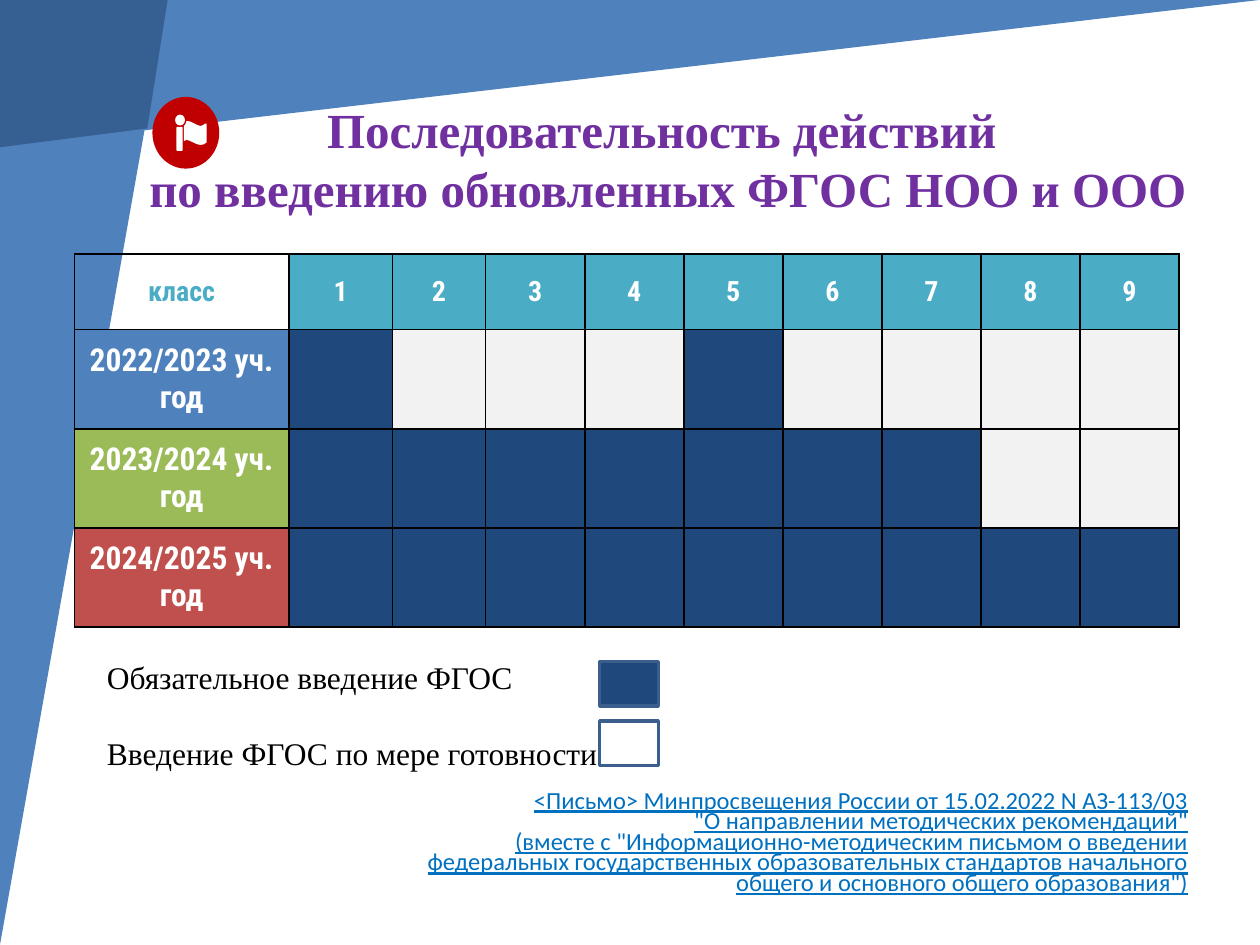
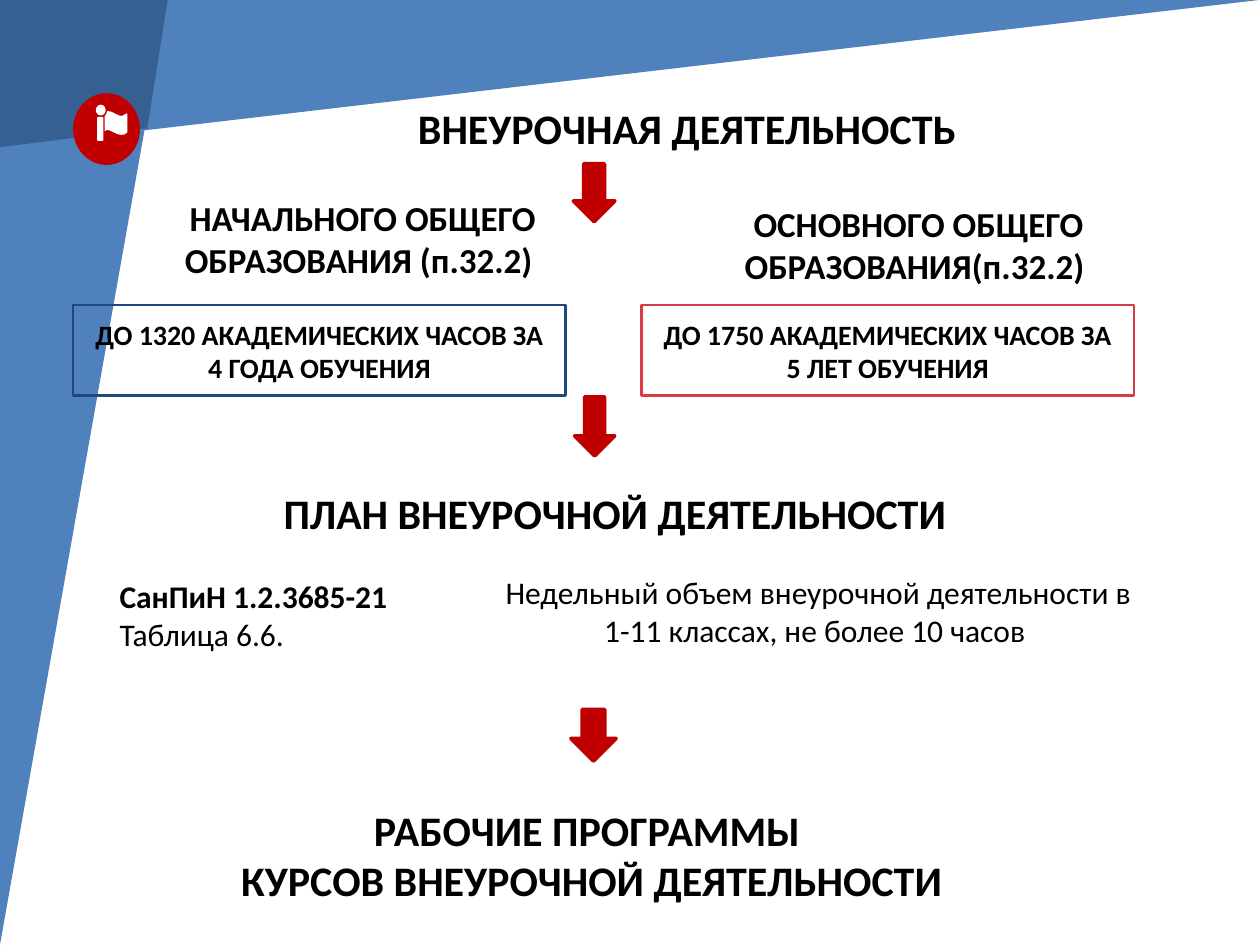
from lxml import etree
from pptx import Presentation, util as u
from pptx.dml.color import RGBColor
from pptx.enum import shapes, text
from pptx.oxml.ns import qn

BAND, CORNER, NAVY, RED = "4F81BD", "376092", "1F497D", "C00000"
TEAL, PALE, WHITE, BLACK = "4BACC6", "F2F2F2", "FFFFFF", "000000"
SWATCH_EDGE = "3A5F8C"
SHAPE, ALIGN, ANCHOR = shapes.MSO_SHAPE, text.PP_ALIGN, text.MSO_ANCHOR

SERIF = dict(name="Times New Roman", size=18, color=BLACK)
BODY = dict(name="Calibri", size=18, color=BLACK)
HEADING = dict(BODY, size=24, bold=True)
LEVEL = dict(BODY, size=20, bold=True)
HOURS = dict(BODY, size=16, bold=True)
TITLE = dict(SERIF, size=28, color="7030A0", bold=True)
LETTER = dict(BODY, size=14, color="0070C0", underline=True)
CELL = dict(name="Roboto Condensed", size=16, color=WHITE, bold=True)

COLUMN_WIDTHS = [122.4, 59.2, 53.4] + [56.6] * 7
ROW_HEIGHTS = [43.2] + [56.6] * 3
SCHOOL_YEARS = [  # label, label fill, grades where the standard is mandatory
    ("2022/2023 уч. год", BAND, {1, 5}),
    ("2023/2024 уч. год", "9BBB59", set(range(1, 8))),
    ("2024/2025 уч. год", "C0504D", set(range(1, 10))),
]
FLAG = [(6.5, 3.6), (6, 5.2), (5, 6.5), (5, 15.1), (6.5, 14.4), (8.2, 14.9), (10.1, 15.8),
        (12.4, 16.9), (14.4, 17.3), (16.4, 17), (18, 15.8), (18, 5.4), (17.3, 5),
        (15.9, 6), (14.4, 6.5), (12.8, 6), (10.8, 5), (8.8, 4)]


def rgb(value):
    return RGBColor.from_string(value)


def points(*lengths):
    return [u.Pt(length) for length in lengths]


def paint(shape, fill=None, line=None, width=1):
    shape.shadow.inherit = False
    if fill:
        shape.fill.solid()
        shape.fill.fore_color.rgb = rgb(fill)
    else:
        shape.fill.background()
    if line:
        shape.line.color.rgb = rgb(line)
        shape.line.width = u.Pt(width)
    else:
        shape.line.fill.background()
    return shape


def add_preset(parent, kind, at, *style):
    return paint(parent.shapes.add_shape(kind, *points(*at)), *style)


def add_polygon(parent, corners, fill):
    corners = [points(*corner) for corner in corners]
    builder = parent.shapes.build_freeform(*corners[0], scale=1.0)
    builder.add_line_segments(corners[1:], close=True)
    return paint(builder.convert_to_shape(), fill)


def format_font(font, style):
    values = dict(style)
    font.color.rgb = rgb(values.pop("color"))
    values["size"] = u.Pt(values["size"])
    for name, value in values.items():
        setattr(font, name, value)


def write(frame, lines, style, align=ALIGN.CENTER, inset=7.2, anchor=ANCHOR.TOP, **spacing):
    """Fill a text frame with one paragraph per line."""
    frame.word_wrap = True
    frame.auto_size = text.MSO_AUTO_SIZE.NONE
    frame.vertical_anchor = anchor
    frame.margin_top = frame.margin_bottom = u.Pt(inset)
    frame.margin_left = frame.margin_right = u.Pt(7.2)
    for index, line in enumerate(lines):
        para = frame.paragraphs[0] if index == 0 else frame.add_paragraph()
        para.text = line
        para.alignment = align
        for name, value in spacing.items():
            if index or name != "space_before":
                setattr(para, name, value)
        for span in para.runs:
            format_font(span.font, style)


def add_text(slide, at, lines, style, **layout):
    box = slide.shapes.add_textbox(*points(*at))
    write(box.text_frame, lines, style, **layout)
    return box


def set_title(slide, at, lines, style):
    title = slide.shapes.title
    title.left, title.top, title.width, title.height = points(*at)
    write(title.text_frame, lines, style)


def add_badge(slide, left, top, glyph_top):
    """Red disc with a white figure holding a flag."""
    add_preset(slide, SHAPE.OVAL, (left, top, 38.2, 41), RED)
    x, y = left + 13, glyph_top
    group = slide.shapes.add_group_shape()
    add_preset(group, SHAPE.OVAL, (x, y, 5.6, 6.2), WHITE)
    add_preset(group, SHAPE.ROUNDED_RECTANGLE, (x + 0.7, y + 7, 3.6, 13.7), WHITE)
    add_polygon(group, [(x + dx, y + dy) for dx, dy in FLAG], WHITE)


def add_backdrop(slide):
    """Draw the blue bands and hand them to the slide's layout."""
    bands = [add_preset(slide, SHAPE.RIGHT_TRIANGLE, (0, 0, width, height), BAND)
             for width, height in ((720, 84.2), (95.8, 540))]
    for band in bands:
        band.element.spPr.find(qn("a:xfrm")).set("flipV", "1")
    corner = add_polygon(slide, [(0, 0), (95.8, 0), (84.2, 73.4), (0, 84.2)], CORNER)
    for number, shape in enumerate(bands + [corner], start=20):
        shape.element.nvSpPr.cNvPr.set("id", str(number))
        slide.slide_layout.shapes.element.append(shape.element)


def format_cell(cell, fill):
    properties = cell._tc.get_or_add_tcPr()
    for side in ("a:lnL", "a:lnR", "a:lnT", "a:lnB"):
        border = etree.SubElement(properties, qn(side), w=str(u.Pt(1)))
        solid = etree.SubElement(border, qn("a:solidFill"))
        etree.SubElement(solid, qn("a:srgbClr"), val=BLACK)
    if fill:
        cell.fill.solid()
        cell.fill.fore_color.rgb = rgb(fill)
    else:
        cell.fill.background()


def write_cell(cell, label, fill, **changes):
    cell.text = label
    cell.vertical_anchor = ANCHOR.MIDDLE
    for side in ("left", "right", "top", "bottom"):
        setattr(cell, f"margin_{side}", u.Pt(7.2))
    para = cell.text_frame.paragraphs[0]
    para.alignment = ALIGN.CENTER
    format_font(para.runs[0].font, dict(CELL, **changes))
    format_cell(cell, fill)


def add_schedule(slide):
    at = points(42.6, 145.2, sum(COLUMN_WIDTHS), sum(ROW_HEIGHTS))
    table = slide.shapes.add_table(len(ROW_HEIGHTS), len(COLUMN_WIDTHS), *at).table
    table.first_row = table.horz_banding = False
    for column, width in zip(table.columns, COLUMN_WIDTHS):
        column.width = u.Pt(width)
    for row, height in zip(table.rows, ROW_HEIGHTS):
        row.height = u.Pt(height)
    grades = range(1, len(COLUMN_WIDTHS))
    write_cell(table.cell(0, 0), "класс", None, color=TEAL)
    for grade in grades:
        write_cell(table.cell(0, grade), str(grade), TEAL)
    for row, (label, fill, mandatory) in enumerate(SCHOOL_YEARS, start=1):
        write_cell(table.cell(row, 0), label, fill, size=18)
        for grade in grades:
            format_cell(table.cell(row, grade), NAVY if grade in mandatory else PALE)


def build_schedule_slide(slide):
    set_title(slide, (57.6, 49.7, 648, 72),
              ["Последовательность действий ", "по введению обновленных ФГОС НОО и ООО"], TITLE)
    add_badge(slide, 87.1, 55.4, 65.5)
    add_schedule(slide)
    add_text(slide, (54, 372.2, 369.4, 72.7),
             ["Обязательное введение ФГОС", "Введение ФГОС по мере готовности"], SERIF,
             align=ALIGN.LEFT, inset=3.6, space_before=u.Pt(22))
    for top, fill in ((378, NAVY), (412, WHITE)):
        add_preset(slide, SHAPE.RECTANGLE, (342.7, top, 33.5, 25.5), fill, SWATCH_EDGE, 2)
    add_text(slide, (218.2, 445.7, 468, 72.7),
             ["<Письмо> Минпросвещения России от 15.02.2022 N АЗ-113/03\n"
              "\"О направлении методических рекомендаций\"\n"
              "(вместе с \"Информационно-методическим письмом о введении федеральных "
              "государственных образовательных стандартов начального общего и основного "
              "общего образования\")"],
             LETTER, align=ALIGN.RIGHT, line_spacing=0.7)


def build_activity_slide(slide):
    set_title(slide, (144.7, 51.1, 501.1, 44.6), ["ВНЕУРОЧНАЯ ДЕЯТЕЛЬНОСТЬ "], HEADING)
    add_badge(slide, 41.8, 53.3, 59.8)
    levels = [
        (33.8, 105.1, ["НАЧАЛЬНОГО ОБЩЕГО", "ОБРАЗОВАНИЯ (п.32.2) "],
         41.8, NAVY, "ДО 1320 АКАДЕМИЧЕСКИХ ЧАСОВ ЗА 4 ГОДА ОБУЧЕНИЯ"),
        (351.4, 108.7, ["ОСНОВНОГО ОБЩЕГО", "ОБРАЗОВАНИЯ(п.32.2) "],
         366.5, "D83C47", "ДО 1750 АКАДЕМИЧЕСКИХ ЧАСОВ ЗА 5 ЛЕТ ОБУЧЕНИЯ"),
    ]
    for left, top, name, frame_left, edge, hours in levels:
        add_text(slide, (left, top, 347, 59.8), name, LEVEL)
        frame = add_preset(slide, SHAPE.RECTANGLE, (frame_left, 174.2, 281.5, 51.8),
                           None, edge, 1.5)
        write(frame.text_frame, [hours], HOURS)
    for at in ((327.6, 93.6, 23.8, 33.1), (328.3, 226.8, 23, 33.8), (326.2, 405.4, 25.9, 29.5)):
        add_preset(slide, SHAPE.DOWN_ARROW, at, RED, RED, 2)
    add_text(slide, (100.8, 271.4, 501.1, 44.6), ["ПЛАН ВНЕУРОЧНОЙ ДЕЯТЕЛЬНОСТИ"], HEADING)
    add_text(slide, (280.8, 324, 373.7, 51.1),
             ["Недельный объем внеурочной деятельности в 1-11 классах, не более 10 часов "],
             BODY, inset=3.6)
    rule = add_text(slide, (61.2, 326.2, 173.5, 51.1), ["СанПиН 1.2.3685-21", "Таблица 6.6."],
                    BODY, align=ALIGN.LEFT, inset=3.6)
    rule.text_frame.paragraphs[0].runs[0].font.bold = True
    add_text(slide, (41.8, 453.6, 592.6, 69.8),
             ["РАБОЧИЕ ПРОГРАММЫ ", "КУРСОВ ВНЕУРОЧНОЙ ДЕЯТЕЛЬНОСТИ"], HEADING,
             anchor=ANCHOR.MIDDLE)


def main():
    deck = Presentation()
    deck.slide_width, deck.slide_height = points(720, 540)
    title_only = deck.slide_layouts[5]
    schedule, activity = (deck.slides.add_slide(title_only) for _ in range(2))
    add_backdrop(schedule)
    build_schedule_slide(schedule)
    build_activity_slide(activity)
    deck.save("out.pptx")


if __name__ == "__main__":
    main()
